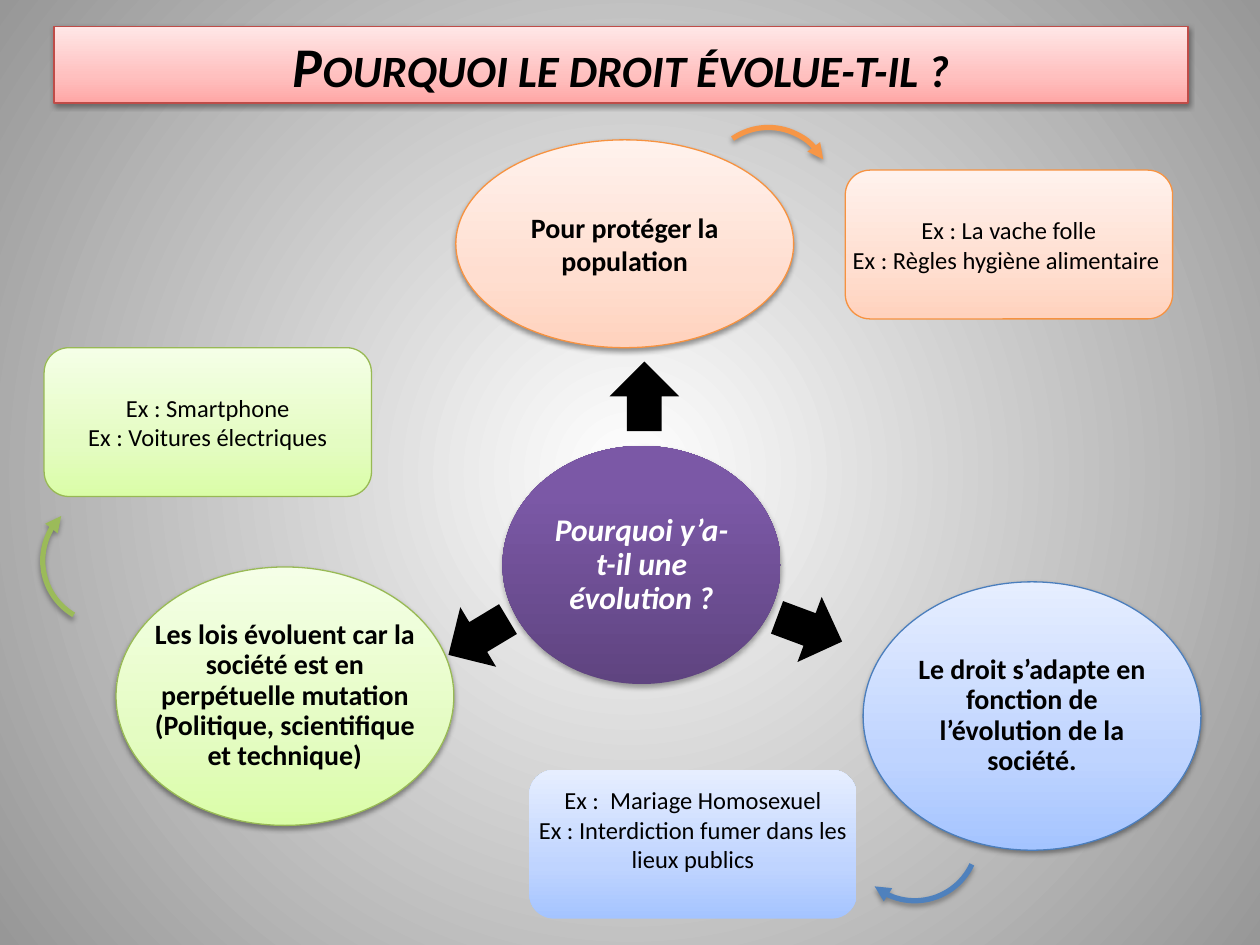
from lxml import etree
from pptx import Presentation
from pptx.dml.color import RGBColor
from pptx.enum.shapes import MSO_SHAPE
from pptx.enum.text import MSO_ANCHOR, PP_ALIGN
from pptx.oxml.ns import qn
from pptx.util import Cm, Pt

ELLIPSE = MSO_SHAPE.OVAL
CARD = MSO_SHAPE.ROUNDED_RECTANGLE
UP_ARROW = MSO_SHAPE.UP_ARROW
ARC = MSO_SHAPE.ARC
CENTER = PP_ALIGN.CENTER
MIDDLE = MSO_ANCHOR.MIDDLE

FONT = "Calibri"
BLACK = "000000"
WHITE = "FFFFFF"
RED = [(0, "FFA6A5"), (35, "FFC0BF"), (100, "FFE7E7")]
PURPLE = [(0, "5F4480"), (80, "7B58A6"), (100, "7C57A8")]
GREEN = [(0, "DAFDA7"), (35, "E4FCC2"), (100, "F5FFE7")]
BLUE = [(0, "A4C4FF"), (35, "BFD4FF"), (100, "E6EEFF")]
ORANGE = [(0, "FFD2BD"), (35, "FFDED0"), (100, "FFF2ED")]
GREY = [(0, WHITE), (100, "979797")]
RED_EDGE, GREEN_EDGE, BLUE_EDGE, ORANGE_EDGE = "BF4C48", "98B955", "4B7EBC", "F69240"

SOFT_SHADOW = (38, 1.6)
DEEP_SHADOW = (35, 1.8)


def rgb(color):
    return RGBColor.from_string(color)


def add_node(parent, tag, **attributes):
    return etree.SubElement(parent, qn(tag), {k: str(v) for k, v in attributes.items()})


def set_gradient(fill, properties, stops, radial=False):
    fill.solid()
    solid = properties.find(qn("a:solidFill"))
    gradient = etree.Element(qn("a:gradFill"), rotWithShape="1")
    stop_list = add_node(gradient, "a:gsLst")
    for position, color in stops:
        stop = add_node(stop_list, "a:gs", pos=position * 1000)
        add_node(stop, "a:srgbClr", val=color)
    if radial:
        center = add_node(gradient, "a:path", path="circle")
        add_node(center, "a:fillToRect", l=50000, t=50000, r=50000, b=50000)
    else:
        add_node(gradient, "a:lin", ang=270 * 60000, scaled=0)
    properties.replace(solid, gradient)


def set_edge(shape, color, width=0.75):
    if color is None:
        shape.line.fill.background()
    else:
        shape.line.color.rgb = rgb(color)
        shape.line.width = Pt(width)


def set_shadow(shape, shadow):
    shape.shadow.inherit = False
    if shadow:
        opacity, distance = shadow
        effects = shape._element.spPr.find(qn("a:effectLst"))
        outer = add_node(effects, "a:outerShdw", blurRad=Pt(3.1), dist=Pt(distance),
                         dir=90 * 60000, rotWithShape=0)
        black = add_node(outer, "a:srgbClr", val=BLACK)
        add_node(black, "a:alpha", val=opacity * 1000)


def set_text(shape, text, size, color=BLACK, bold=False, italic=False, spacing=None):
    frame = shape.text_frame
    frame.text = text
    frame.word_wrap = True
    frame.vertical_anchor = MIDDLE
    for paragraph in frame.paragraphs:
        paragraph.alignment = CENTER
        paragraph.line_spacing = spacing
        for run in paragraph.runs:
            font = run.font
            font.name, font.size, font.color.rgb = FONT, Pt(size), rgb(color)
            font.bold, font.italic = bold, italic


def set_margins(shape, sides, ends, bottom=None):
    frame = shape.text_frame
    frame.margin_left = frame.margin_right = Cm(sides)
    frame.margin_top = Cm(ends)
    frame.margin_bottom = Cm(ends if bottom is None else bottom)


def add_title(slide, text):
    title = slide.shapes.title
    title.left, title.top, title.width, title.height = Cm(1.09), Cm(0.53), Cm(22.86), Cm(1.55)
    set_gradient(title.fill, title._element.spPr, RED)
    set_edge(title, RED_EDGE)
    set_shadow(title, SOFT_SHADOW)
    set_text(title, text, 32, bold=True, italic=True)
    title.text_frame.paragraphs[0].runs[0].font._element.set("cap", "small")


def add_panel(slide, preset, box, stops, edge, shadow=None):
    panel = slide.shapes.add_shape(preset, *map(Cm, box))
    set_gradient(panel.fill, panel._element.spPr, stops)
    set_edge(panel, edge)
    set_shadow(panel, shadow)
    return panel


def add_reason(slide, box, stops, edge, text, side_margin, end_margin, spacing=0.9):
    reason = add_panel(slide, ELLIPSE, box, stops, edge, SOFT_SHADOW)
    set_text(reason, text, 16, bold=True, spacing=spacing)
    set_margins(reason, side_margin, end_margin)


def add_examples(slide, left, top, stops, edge, text, bottom=0):
    card = add_panel(slide, CARD, (left, top, 6.6, 3), stops, edge)
    set_text(card, text, 14)
    set_margins(card, 0, 0, bottom)


def add_arrow(slide, left, top, rotation):
    arrow = slide.shapes.add_shape(UP_ARROW, Cm(left), Cm(top), Cm(1.4), Cm(1.4))
    arrow.rotation = rotation
    arrow.fill.solid()
    arrow.fill.fore_color.rgb = rgb(BLACK)
    set_edge(arrow, None)
    set_shadow(arrow, None)


def add_swoosh(slide, left, top, rotation, start, end, color):
    swoosh = slide.shapes.add_shape(ARC, Cm(left), Cm(top), Cm(2.54), Cm(2.54))
    swoosh.adjustments[0], swoosh.adjustments[1] = start, end
    swoosh.rotation = rotation
    swoosh.fill.background()
    set_edge(swoosh, color, 3)
    add_node(swoosh._element.spPr.find(qn("a:ln")), "a:tailEnd", type="triangle")
    set_shadow(swoosh, DEEP_SHADOW)


def main():
    deck = Presentation()
    deck.slide_width, deck.slide_height = Cm(25.4), Cm(19.05)
    slide = deck.slides.add_slide(deck.slide_layouts[5])
    background = slide.background.fill
    background.solid()
    set_gradient(background, slide._element.find(".//" + qn("p:bgPr")), GREY, radial=True)

    add_title(slide, "Pourquoi le droit évolue-t-il ?")

    question = add_panel(slide, ELLIPSE, (10.13, 8.99, 5.61, 4.8), PURPLE, None, DEEP_SHADOW)
    set_text(question, "Pourquoi y’a-t-il une évolution ?", 18, WHITE, True, True, 0.9)
    set_margins(question, 0.07, 0.06)

    add_reason(slide, (2.34, 11.43, 6.81, 5.21), GREEN, GREEN_EDGE,
               "Les lois évoluent car la société est en perpétuelle mutation "
               "(Politique, scientifique et technique)", -0.24, -0.15)
    add_reason(slide, (17.4, 11.73, 6.81, 5.41), BLUE, BLUE_EDGE,
               "Le droit s’adapte en fonction de l’évolution de la société.", -0.21, 0)
    add_reason(slide, (9.19, 2.82, 6.81, 4.19), ORANGE, ORANGE_EDGE,
               "Pour protéger la population", 0.25, 0.13, 1)

    for left, top, rotation in [(8.94, 12.14, 239), (15.62, 11.99, 110.4), (12.29, 7.29, 0)]:
        add_arrow(slide, left, top, rotation)

    add_examples(slide, 10.67, 15.52, BLUE, None,
                 "Ex :  Mariage Homosexuel\nEx : Interdiction fumer dans les lieux publics", 0.6)
    add_examples(slide, 0.89, 7.01, GREEN, GREEN_EDGE,
                 "Ex : Smartphone\nEx : Voitures électriques")
    add_examples(slide, 17.04, 3.43, ORANGE, ORANGE_EDGE,
                 "Ex : La vache folle\nEx : Règles hygiène alimentaire ")

    add_swoosh(slide, 14.22, 2.57, 326.1, 161.58, 2.64, "F79646")
    add_swoosh(slide, 17.17, 15.62, 84.5, 180.28, 27, "4F81BD")
    add_swoosh(slide, 0.86, 10.03, 180, 180.28, 27, "9BBB59")

    deck.save("out.pptx")


if __name__ == "__main__":
    main()
